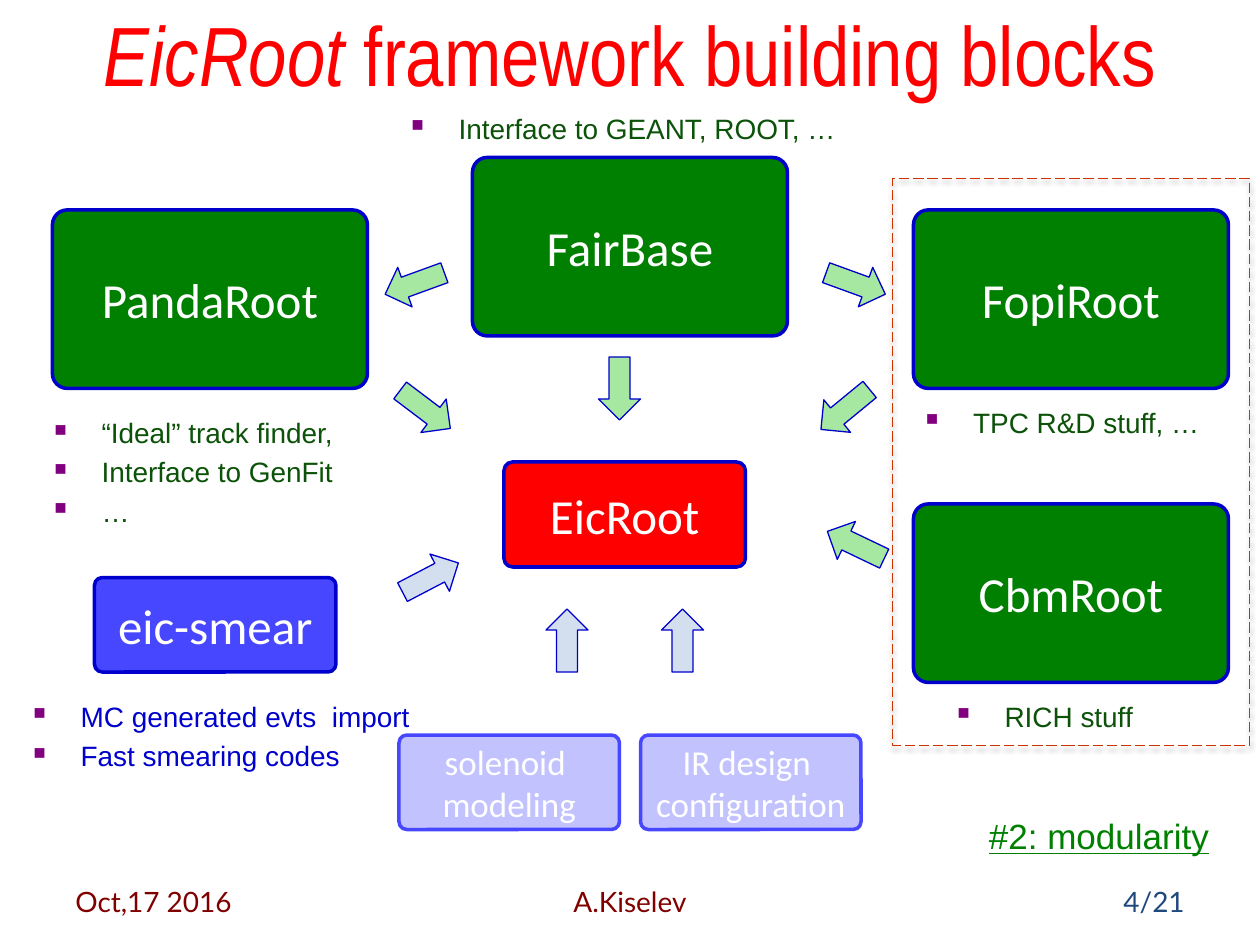
from lxml import etree
from pptx import Presentation
from pptx.dml.color import RGBColor
from pptx.enum.dml import MSO_LINE
from pptx.enum.shapes import MSO_SHAPE
from pptx.enum.text import MSO_ANCHOR, MSO_AUTO_SIZE, PP_ALIGN
from pptx.oxml.ns import qn
from pptx.util import Pt

EMU_PER_PX = 7620
ROUNDED = MSO_SHAPE.ROUNDED_RECTANGLE
RECTANGLE = MSO_SHAPE.RECTANGLE
ARROW = MSO_SHAPE.RIGHT_ARROW
LONG_DASH = MSO_LINE.LONG_DASH
MIDDLE = MSO_ANCHOR.MIDDLE
TOP = MSO_ANCHOR.TOP
LEFT, CENTER, RIGHT = PP_ALIGN.LEFT, PP_ALIGN.CENTER, PP_ALIGN.RIGHT
FIT_SHAPE = MSO_AUTO_SIZE.SHAPE_TO_FIT_TEXT

RED, WHITE, MAROON = "FF0000", "FFFFFF", "800000"
GREEN, DARK_GREEN = "008000", "0C5209"
NAVY, BLUE, PALE_BLUE = "0000CC", "4747FF", "C2C2FF"
ARROW_GREEN, ARROW_BLUE = "27C71B", "95B3D7"


def px(length):
    return length * EMU_PER_PX


def color(code):
    return RGBColor.from_string(code)


def add_node(parent, tag, **attributes):
    node = etree.SubElement(parent, qn(tag))
    for name, value in attributes.items():
        node.set(name, str(value))
    return node


class Diagram:
    def __init__(self, page):
        self.page = page
        self.label_font = "Calibri"
        self.body_font = "Arial"
        self.bullet_color = "800080"
        self.indent = px(45)

    def style(self, span, font, size, code):
        span.font.name = font
        span.font.size = Pt(size)
        span.font.color.rgb = color(code)

    def text(self, left, top, width, height, words, size, code,
             font=None, align=LEFT, anchor=TOP):
        box = self.page.shapes.add_textbox(px(left), px(top), px(width), px(height))
        frame = box.text_frame
        frame.word_wrap = True
        frame.vertical_anchor = anchor
        frame.text = words
        for para in frame.paragraphs:
            para.alignment = align
            for span in para.runs:
                self.style(span, font or self.body_font, size, code)
        return frame

    def title(self, name, rest):
        frame = self.text(0, 0, 1200, 100, name, 48, RED, "Arial Narrow", CENTER, MIDDLE)
        para = frame.paragraphs[0]
        para.runs[0].font.italic = True
        span = para.add_run()
        span.text = rest
        self.style(span, "Arial Narrow", 48, RED)

    def bullets(self, left, top, width, height, words, code=DARK_GREEN):
        frame = self.text(left, top, width, height, words, 16, code)
        for para in frame.paragraphs:
            properties = para._p.get_or_add_pPr()
            properties.set("marL", str(self.indent))
            properties.set("indent", str(-self.indent))
            add_node(add_node(properties, "a:spcBef"), "a:spcPct", val=20000)
            add_node(add_node(properties, "a:buClr"), "a:srgbClr", val=self.bullet_color)
            add_node(properties, "a:buSzPct", val=60000)
            add_node(properties, "a:buChar", char="■")

    def shape(self, kind, left, top, width, height, line, weight):
        shape = self.page.shapes.add_shape(kind, px(left), px(top), px(width), px(height))
        shape.shadow.inherit = False
        shape.line.color.rgb = color(line)
        shape.line.width = Pt(weight)
        return shape

    def block(self, left, top, width, height, words, fill=GREEN, line=NAVY, size=28):
        box = self.shape(ROUNDED, left, top, width, height, line, 2)
        box.adjustments[0] = 0.083
        box.fill.solid()
        box.fill.fore_color.rgb = color(fill)
        frame = box.text_frame
        frame.margin_left = frame.margin_right = 0
        frame.margin_top = frame.margin_bottom = 0
        frame.vertical_anchor = MIDDLE
        frame.text = words
        for para in frame.paragraphs:
            para.alignment = CENTER
            for span in para.runs:
                self.style(span, self.label_font, size, WHITE)

    def arrow(self, left, top, angle, fill):
        arrow = self.shape(ARROW, left, top, 60, 40, NAVY, 0.75)
        arrow.rotation = angle
        arrow.fill.solid()
        arrow.fill.fore_color.rgb = color(fill)
        tint = arrow._element.spPr.find(qn("a:solidFill")).find(qn("a:srgbClr"))
        add_node(tint, "a:alpha", val=41000)

    def dashed_group(self, left, top, width, height):
        outline = self.shape(RECTANGLE, left, top, width, height, "CC3300", 0.75)
        outline.fill.background()
        outline.line.dash_style = LONG_DASH
        effects = outline._element.spPr.find(qn("a:effectLst"))
        shadow = add_node(effects, "a:outerShdw", blurRad=Pt(3.1), dist=Pt(1.8),
                          dir=5400000, rotWithShape=0)
        add_node(add_node(shadow, "a:srgbClr", val="000000"), "a:alpha", val=35000)


def main():
    deck = Presentation()
    deck.slide_width, deck.slide_height = px(1200), px(900)
    diagram = Diagram(deck.slides.add_slide(deck.slide_layouts[6]))

    diagram.title("EicRoot", " framework building blocks")

    for left, top, words in (
        (50, 200, "PandaRoot"),
        (450, 150, "FairBase"),
        (870, 200, "FopiRoot"),
        (870, 480, "CbmRoot"),
    ):
        diagram.block(left, top, 300, 170, words)
    diagram.block(480, 440, 230, 100, "EicRoot", RED)
    diagram.block(90, 550, 230, 90, "eic-smear", BLUE)
    for left, words in ((380, "solenoid \nmodeling"), (610, "IR design \nconfiguration")):
        diagram.block(left, 700, 210, 90, words, PALE_BLUE, BLUE, 20)

    for left, top, angle in (
        (365, 250, 160),
        (785, 250, 20),
        (375, 370, 37.1),
        (560, 350, 90),
        (775, 370, 140.6),
        (785, 499, 205.6),
    ):
        diagram.arrow(left, top, angle, ARROW_GREEN)
    for left, top, angle in ((380, 530, 332.4), (510, 590, 270), (620, 590, 270)):
        diagram.arrow(left, top, angle, ARROW_BLUE)

    diagram.bullets(380, 100, 460, 60, "Interface to GEANT, ROOT, …")
    diagram.bullets(40, 390, 310, 130, "“Ideal” track finder,\nInterface to GenFit\n…")
    diagram.bullets(870, 380, 310, 50, "TPC R&D stuff, …")
    diagram.bullets(900, 660, 250, 50, "RICH stuff")
    diagram.bullets(20, 660, 390, 80, "MC generated evts  import\nFast smearing codes", NAVY)

    diagram.dashed_group(850, 170, 340, 540)

    topic = diagram.text(930, 770, 236, 53, "#2: modularity", 20, GREEN)
    topic.word_wrap = False
    topic.auto_size = FIT_SHAPE
    topic.paragraphs[0].runs[0].font.underline = True

    for left, width, words, code, align in (
        (60, 280, "Oct,17 2016", MAROON, LEFT),
        (410, 380, "A.Kiselev", MAROON, CENTER),
        (860, 280, "4/21", "1F497D", RIGHT),
    ):
        diagram.text(left, 834, width, 48, words, 16, code, "Lato", align, MIDDLE)

    deck.save("out.pptx")


if __name__ == "__main__":
    main()
